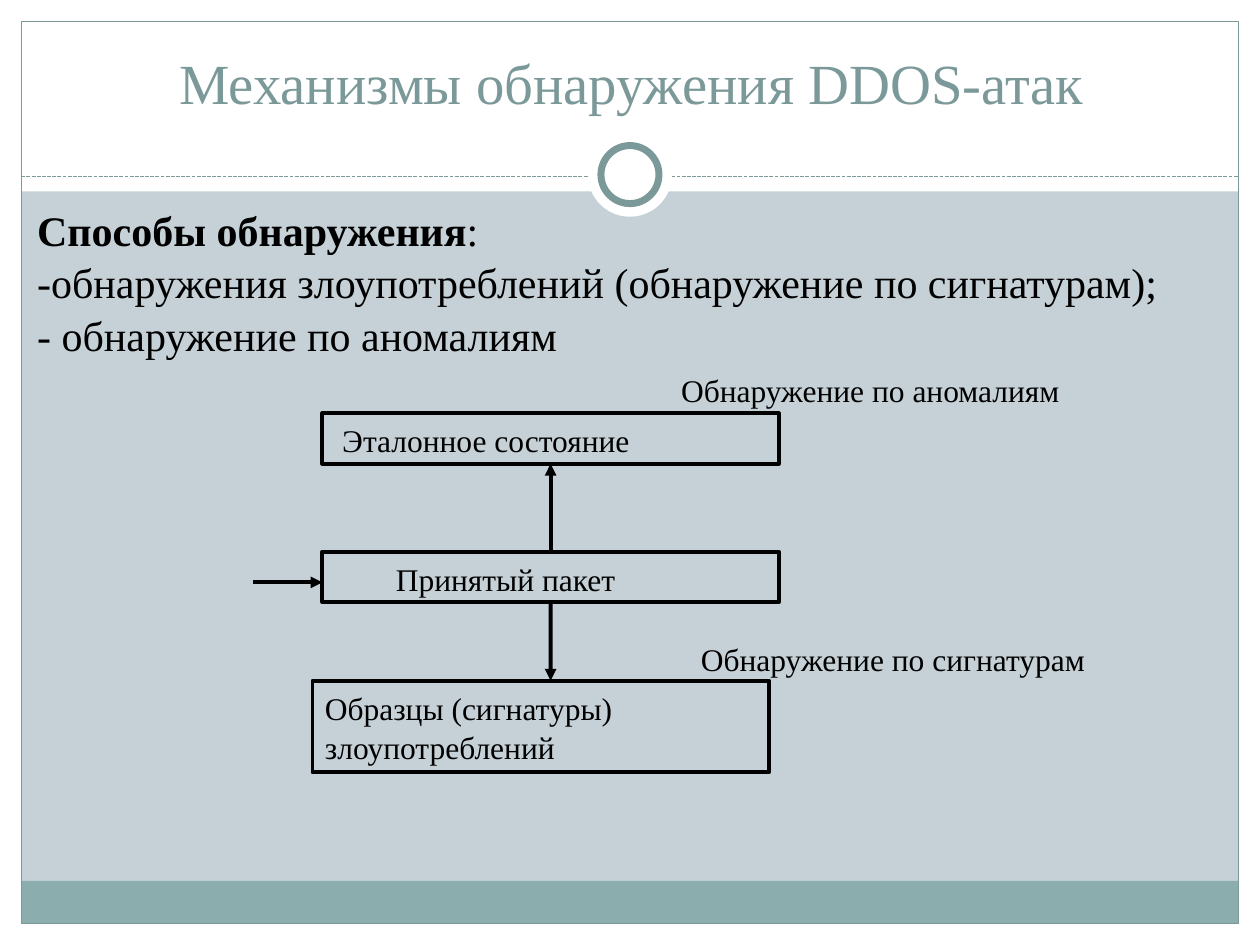
from dataclasses import dataclass

from lxml import etree
from pptx import Presentation
from pptx.dml.color import RGBColor
from pptx.enum.dml import MSO_LINE
from pptx.enum.shapes import MSO_CONNECTOR, MSO_SHAPE
from pptx.enum.text import MSO_ANCHOR, PP_ALIGN
from pptx.oxml.ns import qn
from pptx.util import Cm, Pt

RECTANGLE, OVAL = MSO_SHAPE.RECTANGLE, MSO_SHAPE.OVAL
STRAIGHT, DASH = MSO_CONNECTOR.STRAIGHT, MSO_LINE.SQUARE_DOT
LEFT, CENTER = PP_ALIGN.LEFT, PP_ALIGN.CENTER
TOP, BOTTOM = MSO_ANCHOR.TOP, MSO_ANCHOR.BOTTOM
SIDE_TOP, SIDE_BOTTOM = 0, 2


@dataclass(frozen=True)
class Theme:
    """Colours, font and type sizes of the slide."""
    background: RGBColor = RGBColor(0xC5, 0xD1, 0xD7)
    paper: RGBColor = RGBColor(0xFF, 0xFF, 0xFF)
    accent: RGBColor = RGBColor(0x7C, 0x99, 0x9A)
    band: RGBColor = RGBColor(0x8C, 0xAD, 0xAE)
    ink: RGBColor = RGBColor(0, 0, 0)
    font: str = "Times New Roman"
    title: float = 32.4
    body: float = 24
    label: float = 18
    leading: float = 1.05
    hairline: float = 0.75
    stroke: float = 2.25
    ring: float = 4


@dataclass(frozen=True)
class Box:
    """A region in centimetres."""
    left: float
    top: float
    width: float
    height: float

    def inner(self, left, top, width, height):
        """Return a box placed relative to this one."""
        return Box(self.left + left, self.top + top, width, height)

    def lengths(self):
        """Return left, top, width and height as lengths."""
        return Cm(self.left), Cm(self.top), Cm(self.width), Cm(self.height)


THEME = Theme()


def add_shape(slide, kind, box, fill=None, line=None, width=THEME.hairline):
    """Add a flat preset shape."""
    shape = slide.shapes.add_shape(kind, *box.lengths())
    shape.shadow.inherit = False
    if fill is None:
        shape.fill.background()
    else:
        shape.fill.solid()
        shape.fill.fore_color.rgb = fill
    if line is None:
        shape.line.fill.background()
    else:
        shape.line.color.rgb = line
        shape.line.width = Pt(width)
    return shape


def add_line(slide, start, end, color, width):
    """Add a straight connector between two points in centimetres."""
    points = [Cm(value) for value in (*start, *end)]
    connector = slide.shapes.add_connector(STRAIGHT, *points)
    connector.line.color.rgb = color
    connector.line.width = Pt(width)
    etree.SubElement(connector._element.spPr, qn("a:effectLst"))
    return connector


def add_arrow(slide, start, end):
    """Add a line with a triangular head at its end."""
    arrow = add_line(slide, start, end, THEME.ink, THEME.stroke)
    etree.SubElement(arrow.line._get_or_add_ln(), qn("a:tailEnd"), type="triangle")
    return arrow


def write(shape, lines, size, color=THEME.ink, align=LEFT, anchor=TOP,
          wrap=True, indent=0, leading=THEME.leading):
    """Fill a shape with evenly styled paragraphs."""
    frame = shape.text_frame
    frame.word_wrap = wrap
    frame.vertical_anchor = anchor
    frame.margin_left = Cm(0.25 + indent)
    for index, line in enumerate(lines):
        paragraph = frame.add_paragraph() if index else frame.paragraphs[0]
        paragraph.text = line
        paragraph.alignment = align
        paragraph.line_spacing = leading
        paragraph.font.name = THEME.font
        paragraph.font.size = Pt(size)
        paragraph.font.color.rgb = color
    return frame


def add_text(slide, box, lines, size, **style):
    """Add a text box and return its text frame."""
    return write(slide.shapes.add_textbox(*box.lengths()), lines, size, **style)


def draw_frame(slide, box):
    """Draw the white margins, the border, the band and the ring."""
    margin, header, band = 0.43, 3.86, 0.86
    inner_width = box.width - 2 * margin
    bottom = box.height - margin
    middle, rule = box.width / 2, 3.56
    margins = (
        (0, bottom, box.width, margin),
        (0, 0, box.width, header),
        (0, 0, margin, box.height),
        (box.width - margin, 0, margin, box.height),
    )
    for place in margins:
        add_shape(slide, RECTANGLE, box.inner(*place), THEME.paper)
    add_shape(slide, RECTANGLE, box.inner(margin, bottom - band, inner_width, band),
              THEME.band)
    add_shape(slide, RECTANGLE, box.inner(margin, margin, inner_width, bottom - margin),
              line=THEME.accent)
    divider = add_line(slide, (box.left + margin, box.top + rule),
                       (box.left + box.width - margin, box.top + rule),
                       THEME.accent, THEME.hairline)
    divider.line.dash_style = DASH
    for diameter, color in ((1.7, None), (1.17, THEME.accent)):
        place = box.inner(middle - diameter / 2, 3.52 - diameter / 2, diameter, diameter)
        add_shape(slide, OVAL, place, THEME.paper, color, THEME.ring)


def draw_title(slide, box):
    """Write the slide title."""
    add_text(slide, box, ["Механизмы обнаружения DDOS-атак"], THEME.title,
             color=THEME.accent, align=CENTER, anchor=BOTTOM, leading=1)


def draw_methods(slide, box):
    """List the detection methods under a bold heading."""
    frame = add_text(slide, box, [
        "",
        "-обнаружения злоупотреблений (обнаружение по сигнатурам);",
        "- обнаружение по аномалиям",
    ], THEME.body, wrap=False)
    for text, bold in (("Способы обнаружения", True), (":", False)):
        run = frame.paragraphs[0].add_run()
        run.text = text
        run.font.bold = bold


def draw_diagram(slide, box):
    """Draw the packet checked against the reference state and signatures."""
    width, height = 9.2, 1.02
    left, packet_top, signatures_top = 1.4, 3.8, 6.4
    center = box.left + left + width / 2
    nodes = [
        (left, 1.01, height, "Эталонное состояние", 0.15),
        (left, packet_top, height, "Принятый пакет", 1.23),
        (left - 0.2, signatures_top, 1.85, "Образцы (сигнатуры) злоупотреблений", 0),
    ]
    shapes = []
    for node_left, top, node_height, text, indent in nodes:
        place = box.inner(node_left, top, width, node_height)
        shape = add_shape(slide, RECTANGLE, place, line=THEME.ink, width=THEME.stroke)
        write(shape, [text], THEME.label, indent=indent)
        shapes.append(shape)
    reference, packet, _ = shapes

    upward = add_arrow(slide, (center, box.top + packet_top), (center, box.top + 2.03))
    upward.begin_connect(packet, SIDE_TOP)
    upward.end_connect(reference, SIDE_BOTTOM)
    downward = add_arrow(slide, (center, box.top + packet_top + height),
                         (center, box.top + signatures_top))
    downward.begin_connect(packet, SIDE_BOTTOM)
    add_arrow(slide, (box.left, box.top + 4.42), (box.left + left, box.top + 4.42))

    labels = (
        (8.38, 0, 8.2, "Обнаружение по аномалиям"),
        (8.78, 5.41, 8.33, "Обнаружение по сигнатурам"),
    )
    for label_left, top, label_width, text in labels:
        add_text(slide, box.inner(label_left, top, label_width, height), [text],
                 THEME.label, wrap=False)


def main():
    """Build and save the slide."""
    presentation = Presentation()
    page = Box(0, 0, 25.4, 19.05)
    presentation.slide_width, presentation.slide_height = page.lengths()[2:]
    slide = presentation.slides.add_slide(presentation.slide_layouts[6])
    slide.background.fill.solid()
    slide.background.fill.fore_color.rgb = THEME.background
    draw_frame(slide, page)
    draw_title(slide, page.inner(1.3, 0.91, 22.86, 1.55))
    draw_methods(slide, page.inner(0.5, 3.94, 23.32, 3.33))
    draw_diagram(slide, page.inner(5.1, 7.32, 17.12, 8.25))
    presentation.save("out.pptx")


if __name__ == "__main__":
    main()
